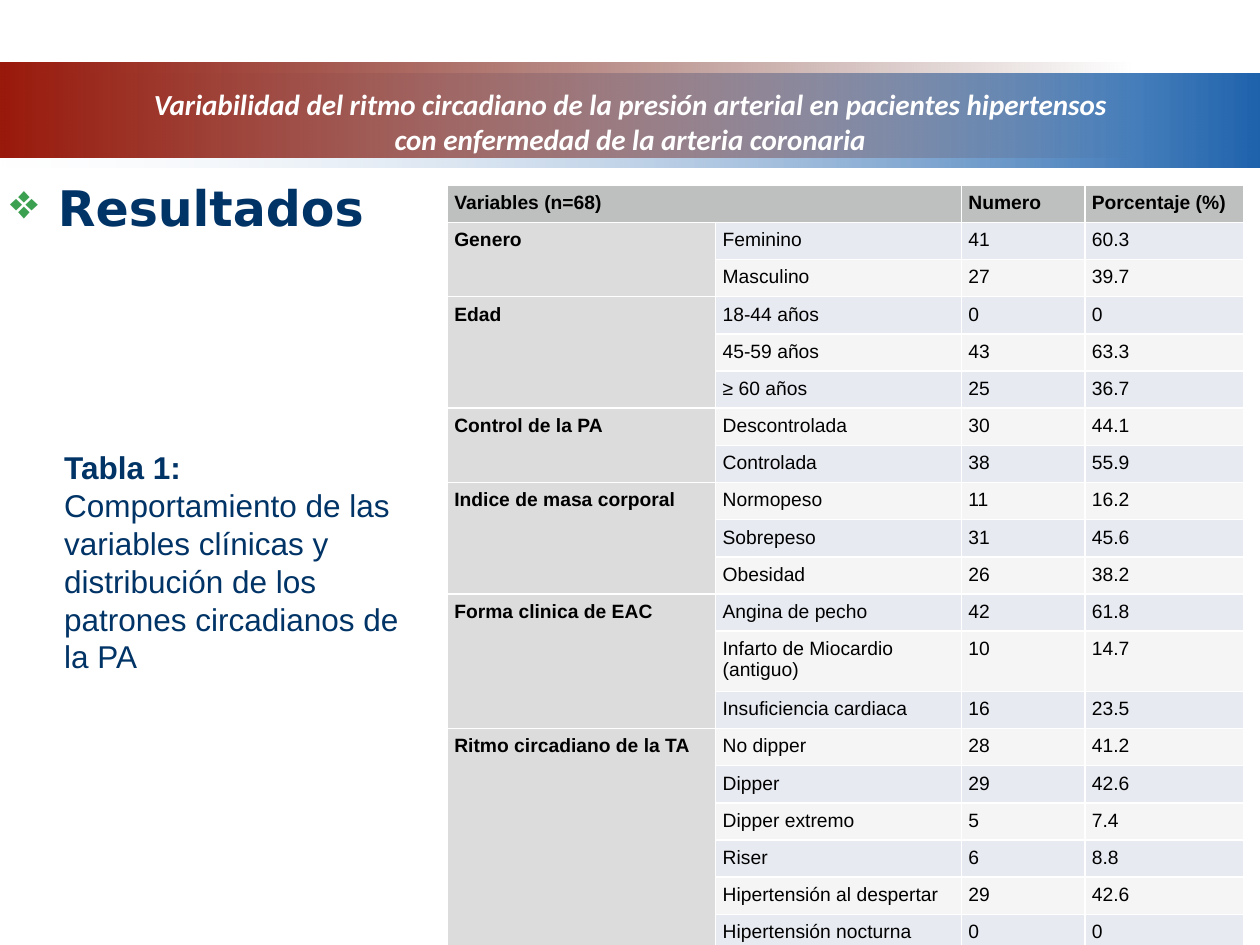
from lxml.etree import SubElement
from pptx import Presentation
from pptx.dml.color import RGBColor
from pptx.enum.shapes import MSO_SHAPE
from pptx.enum.text import MSO_ANCHOR, MSO_AUTO_SIZE, PP_ALIGN
from pptx.oxml import parse_xml
from pptx.oxml.ns import nsdecls, qn
from pptx.util import Inches, Pt

NAVY = "003366"
WHITE = "FFFFFF"
HEADERS = ["Variables (n=68)", "", "Numero", "Porcentaje (%)"]
GROUPS = [
    ("Genero", [("Feminino", "41", "60.3"), ("Masculino", "27", "39.7")]),
    ("Edad", [("18-44 años", "0", "0"), ("45-59 años", "43", "63.3"),
              ("≥ 60 años", "25", "36.7")]),
    ("Control de la PA", [("Descontrolada", "30", "44.1"), ("Controlada", "38", "55.9")]),
    ("Indice de masa corporal", [("Normopeso", "11", "16.2"), ("Sobrepeso", "31", "45.6"),
                                 ("Obesidad", "26", "38.2")]),
    ("Forma clinica de EAC", [("Angina de pecho", "42", "61.8"),
                              ("Infarto de Miocardio (antiguo)", "10", "14.7"),
                              ("Insuficiencia cardiaca", "16", "23.5")]),
    ("Ritmo circadiano de la TA", [("No dipper", "28", "41.2"), ("Dipper", "29", "42.6"),
                                   ("Dipper extremo", "5", "7.4"), ("Riser", "6", "8.8"),
                                   ("Hipertensión al despertar", "29", "42.6"),
                                   ("Hipertensión nocturna", "0", "0")]),
]
COLUMN_WIDTHS = [2.13, 1.95, 0.98, 1.26]
TALL_ROW, TALL_HEIGHT = 12, 0.46


def color(value):
    return RGBColor.from_string(value)


def style_run(run, size, name, value, bold=False, italic=False):
    font = run.font
    font.size, font.name, font.bold, font.italic = Pt(size), name, bold, italic
    font.color.rgb = color(value)


def add_text_frame(slide, left, top, width, height, side_inset=0.05):
    box = slide.shapes.add_textbox(Inches(left), Inches(top), Inches(width), Inches(height))
    frame = box.text_frame
    frame.word_wrap = True
    frame.margin_left = frame.margin_right = Inches(side_inset)
    frame.margin_top = frame.margin_bottom = Inches(0.05)
    return frame


def add_gradient_band(slide, left, top, width, height, stops):
    shape = slide.shapes.add_shape(
        MSO_SHAPE.RECTANGLE, Inches(left), Inches(top), Inches(width), Inches(height))
    shape.shadow.inherit = False
    shape.line.fill.background()
    stop_xml = "".join(
        f'<a:gs pos="{position * 1000}"><a:srgbClr val="{value}">'
        f'<a:alpha val="{alpha * 1000}"/></a:srgbClr></a:gs>'
        for position, value, alpha in stops)
    gradient = parse_xml(
        f'<a:gradFill {nsdecls("a")} rotWithShape="1"><a:gsLst>{stop_xml}</a:gsLst>'
        '<a:lin ang="10800000" scaled="0"/></a:gradFill>')
    shape._element.spPr.find(qn("a:prstGeom")).addnext(gradient)


def add_title(slide, left, top, width, height):
    frame = add_text_frame(slide, left, top, width, height, 0.15)
    frame.vertical_anchor = MSO_ANCHOR.MIDDLE
    frame.text = ("Variabilidad del ritmo circadiano de la presión arterial en pacientes "
                  "hipertensos con enfermedad de la arteria coronaria")
    paragraph = frame.paragraphs[0]
    paragraph.alignment = PP_ALIGN.CENTER
    style_run(paragraph.runs[0], 16.6, "Calibri", WHITE, bold=True, italic=True)


def add_heading(slide, left, top, width, height):
    frame = add_text_frame(slide, left, top, width, height)
    frame.text = "Resultados"
    paragraph = frame.paragraphs[0]
    properties = paragraph._p.get_or_add_pPr()
    properties.set("marL", str(Inches(0.38)))
    properties.set("indent", str(Inches(-0.38)))
    bullet_color = SubElement(properties, qn("a:buClr"))
    SubElement(bullet_color, qn("a:srgbClr"), val="3CA051")
    SubElement(properties, qn("a:buChar"), char="❖")
    style_run(paragraph.runs[0], 28, "DejaVu Sans", NAVY, bold=True)


def add_caption(slide, left, top, width, height):
    frame = add_text_frame(slide, left, top, width, height)
    frame.auto_size = MSO_AUTO_SIZE.SHAPE_TO_FIT_TEXT
    paragraph = frame.paragraphs[0]
    parts = [("Tabla 1: ", True),
             ("Comportamiento de las variables clínicas y distribución de los "
              "patrones circadianos de la PA", False)]
    for text, bold in parts:
        run = paragraph.add_run()
        run.text = text
        style_run(run, 18, "Arial", NAVY, bold)


def fill_cell(cell, text, fill, bold):
    cell.margin_left = cell.margin_right = Inches(1 / 18)
    cell.margin_top = cell.margin_bottom = Inches(1 / 18)
    cell.text = text
    for run in cell.text_frame.paragraphs[0].runs:
        style_run(run, 11, "Arial", "000000", bold)
    properties = cell._tc.get_or_add_tcPr()
    for side in ("lnL", "lnR", "lnT", "lnB"):
        line = SubElement(properties, qn(f"a:{side}"), w=str(Pt(1)))
        solid = SubElement(line, qn("a:solidFill"))
        SubElement(solid, qn("a:srgbClr"), val=WHITE)
    cell.fill.solid()
    cell.fill.fore_color.rgb = color(fill)


def add_results_table(slide, left, top, width, height):
    rows = [HEADERS]
    for name, entries in GROUPS:
        for index, entry in enumerate(entries):
            rows.append([name if index == 0 else "", *entry])
    table = slide.shapes.add_table(
        len(rows), len(HEADERS), Inches(left), Inches(top),
        Inches(width), Inches(height)).table
    for column, column_width in zip(table.columns, COLUMN_WIDTHS):
        column.width = Inches(column_width)
    row_height = (height - TALL_HEIGHT) / (len(rows) - 1)
    for row_index, values in enumerate(rows):
        table.rows[row_index].height = Inches(
            TALL_HEIGHT if row_index == TALL_ROW else row_height)
        for column_index, text in enumerate(values):
            if row_index == 0:
                fill = "BEC0BF"
            elif column_index == 0:
                fill = "DCDCDC"
            else:
                fill = "E7EAF1" if row_index % 2 else "F5F5F5"
            bold = row_index == 0 or column_index == 0
            fill_cell(table.cell(row_index, column_index), text, fill, bold)
    table.cell(0, 0).merge(table.cell(0, 1))
    first = 1
    for name, entries in GROUPS:
        last = first + len(entries) - 1
        table.cell(first, 0).merge(table.cell(last, 0))
        first = last + 1


def main():
    presentation = Presentation()
    presentation.slide_width, presentation.slide_height = Inches(10), Inches(7.5)
    slide = presentation.slides.add_slide(presentation.slide_layouts[6])
    add_gradient_band(slide, 0, 0.58, 10, 0.75, [(0, "1F63AD", 100), (100, "E3EBF5", 0)])
    add_gradient_band(slide, 0, 0.5, 9, 0.75, [(0, "470C05", 0), (100, "99190B", 100)])
    add_title(slide, 0.96, 0.65, 8.08, 0.62)
    add_heading(slide, 0.03, 1.36, 9.95, 6.02)
    add_results_table(slide, 3.55, 1.47, 6.32, 5.94)
    add_caption(slide, 0.46, 3.51, 2.84, 1.84)
    presentation.save("out.pptx")


if __name__ == "__main__":
    main()
